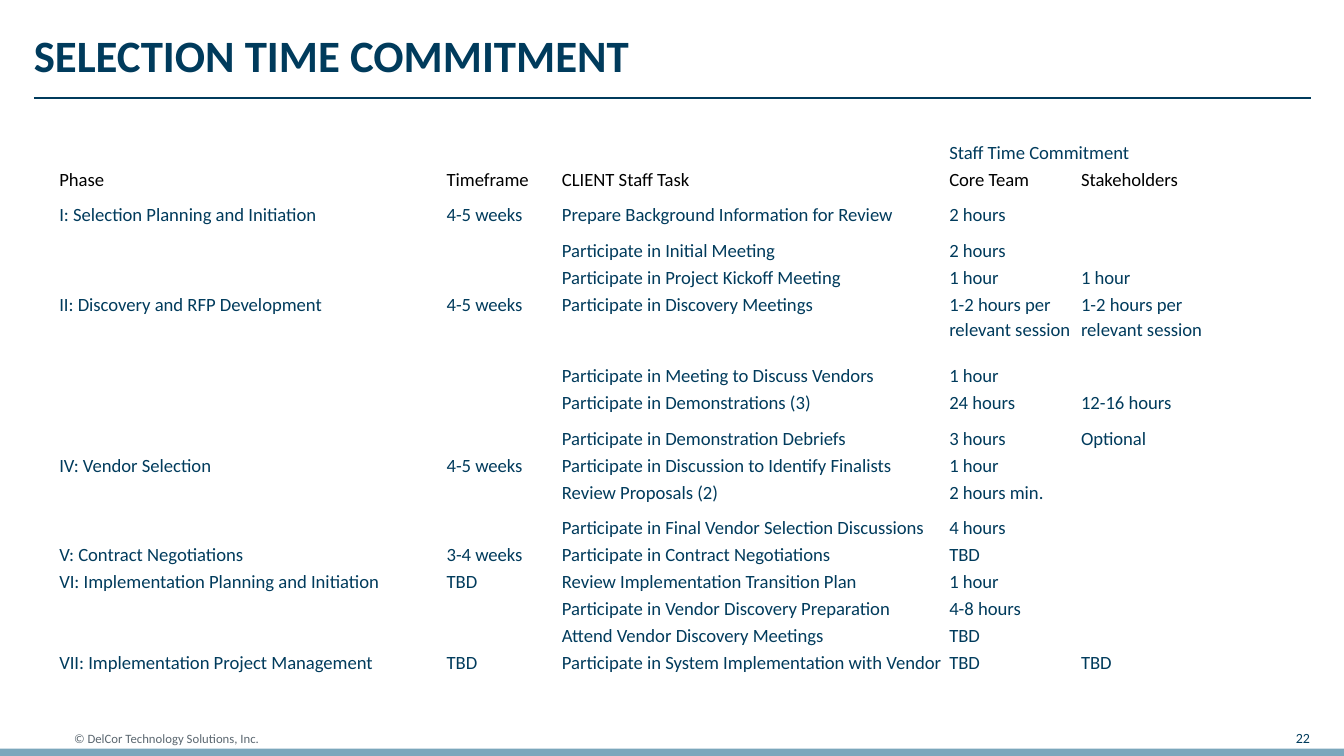
from lxml.etree import SubElement
from pptx import Presentation
from pptx.dml.color import RGBColor
from pptx.enum.shapes import MSO_CONNECTOR, MSO_SHAPE
from pptx.enum.text import MSO_ANCHOR, PP_ALIGN
from pptx.oxml.ns import qn
from pptx.util import Cm, Pt

NAVY = RGBColor(0x00, 0x3B, 0x5C)
BLACK = RGBColor(0x00, 0x00, 0x00)
GREY = RGBColor(0x5B, 0x67, 0x70)
SKY = RGBColor(0x7B, 0xA7, 0xBC)
FONT = "Calibri"

COLUMN_WIDTHS = [7.32, 2.18, 7.32, 2.49, 2.49]
LOW, MEDIUM, TALL = 0.51, 0.67, 1.35
SESSION = "1-2 hours per relevant session"
HEADINGS = ["Phase", "Timeframe", "CLIENT Staff Task", "Core Team", "Stakeholders"]
PHASES = [
    ("I: Selection Planning and Initiation", "4-5 weeks", [
        (MEDIUM, "Prepare Background Information for Review", "2 hours", ""),
        (LOW, "Participate in Initial Meeting", "2 hours", ""),
        (LOW, "Participate in Project Kickoff Meeting", "1 hour", "1 hour"),
    ]),
    ("II: Discovery and RFP Development", "4-5 weeks", [
        (TALL, "Participate in Discovery Meetings", SESSION, SESSION),
        (LOW, "Participate in Meeting to Discuss Vendors", "1 hour", ""),
        (MEDIUM, "Participate in Demonstrations (3)", "24 hours", "12-16 hours"),
        (LOW, "Participate in Demonstration Debriefs", "3 hours", "Optional"),
    ]),
    ("IV: Vendor Selection", "4-5 weeks", [
        (LOW, "Participate in Discussion to Identify Finalists", "1 hour", ""),
        (MEDIUM, "Review Proposals (2)", "2 hours min.", ""),
        (LOW, "Participate in Final Vendor Selection Discussions", "4 hours", ""),
    ]),
    ("V: Contract Negotiations", "3-4 weeks", [
        (LOW, "Participate in Contract Negotiations", "TBD", ""),
    ]),
    ("VI: Implementation Planning and Initiation", "TBD", [
        (LOW, "Review Implementation Transition Plan", "1 hour", ""),
        (LOW, "Participate in Vendor Discovery Preparation", "4-8 hours", ""),
        (LOW, "Attend Vendor Discovery Meetings", "TBD", ""),
    ]),
    ("VII: Implementation Project Management", "TBD", [
        (MEDIUM, "Participate in System Implementation with Vendor", "TBD", "TBD"),
    ]),
]


def add_span(para, text, size, color, bold=False):
    span = para.add_run()
    span.text = text
    span.font.name = FONT
    span.font.size = Pt(size)
    span.font.bold = bold
    span.font.color.rgb = color


def add_text(page, left, top, width, height, text, size, color,
             bold=False, align=PP_ALIGN.LEFT, anchor=MSO_ANCHOR.MIDDLE, spacing=1.0):
    box = page.shapes.add_textbox(Cm(left), Cm(top), Cm(width), Cm(height))
    frame = box.text_frame
    frame.word_wrap = True
    frame.vertical_anchor = anchor
    frame.margin_left = frame.margin_right = frame.margin_top = frame.margin_bottom = 0
    para = frame.paragraphs[0]
    para.alignment = align
    para.line_spacing = spacing
    add_span(para, text, size, color, bold)


def add_header(page, left, top, width, height):
    add_text(page, left, top, width, height, "SELECTION TIME COMMITMENT", 24, NAVY,
             bold=True, anchor=MSO_ANCHOR.TOP, spacing=0.9)
    bottom = Cm(top + height)
    rule = page.shapes.add_connector(
        MSO_CONNECTOR.STRAIGHT, Cm(left), bottom, Cm(left + width), bottom)
    rule.line.color.rgb = NAVY
    rule.line.width = Pt(1)
    SubElement(rule._element.spPr, qn("a:effectLst"))


def add_footer(page, left, top, width, height):
    band = page.shapes.add_shape(
        MSO_SHAPE.RECTANGLE, Cm(left), Cm(top + 0.41), Cm(width), Cm(height - 0.41))
    band.shadow.inherit = False
    band.fill.solid()
    band.fill.fore_color.rgb = SKY
    band.line.fill.background()
    add_text(page, left + 1.4, top, 4.88, 0.43,
             "© DelCor Technology Solutions, Inc.", 6.8, GREY)
    add_text(page, left + width - 1.55, top, 0.91, 0.43, "22", 7.5, NAVY,
             align=PP_ALIGN.RIGHT)


def fill_cell(cell, text, color):
    cell.fill.background()
    cell.margin_left = cell.margin_right = Cm(0.05)
    cell.margin_top = cell.margin_bottom = 0
    para = cell.text_frame.paragraphs[0]
    para.line_spacing = 1.1
    if text:
        add_span(para, text, 10, color)
    else:
        SubElement(para._p, qn("a:endParaRPr"), sz="1000")


def add_schedule(page, left, top, width, height):
    rows = [(LOW, ["", "", "", "Staff Time Commitment", ""]), (MEDIUM, HEADINGS)]
    merges = [(0, 0, 0, 2), (0, 3, 0, 4)]
    for phase, timeframe, tasks in PHASES:
        first = len(rows)
        for index, (row_height, *details) in enumerate(tasks):
            lead = ["", ""] if index else [phase, timeframe]
            rows.append((row_height, lead + details))
        if len(tasks) > 1:
            merges += [(first, column, len(rows) - 1, column) for column in (0, 1)]

    table = page.shapes.add_table(
        len(rows), len(COLUMN_WIDTHS), Cm(left), Cm(top), Cm(width), Cm(height)).table
    table.first_row = False
    table.horz_banding = False
    for column, column_width in zip(table.columns, COLUMN_WIDTHS):
        column.width = Cm(column_width)
    for number, (row_height, texts) in enumerate(rows):
        table.rows[number].height = Cm(row_height)
        color = BLACK if texts is HEADINGS else NAVY
        for column, text in enumerate(texts):
            fill_cell(table.cell(number, column), text, color)
    for row, column, last_row, last_column in merges:
        table.cell(row, column).merge(table.cell(last_row, last_column))


def main():
    deck = Presentation()
    deck.slide_width = Cm(25.4)
    deck.slide_height = Cm(14.29)
    page = deck.slides.add_slide(deck.slide_layouts[6])
    add_footer(page, 0, 13.74, 25.4, 0.64)
    add_header(page, 0.64, 0.64, 24.13, 1.21)
    add_schedule(page, 1.07, 2.64, 21.8, 10.31)
    deck.save("out.pptx")


if __name__ == "__main__":
    main()
